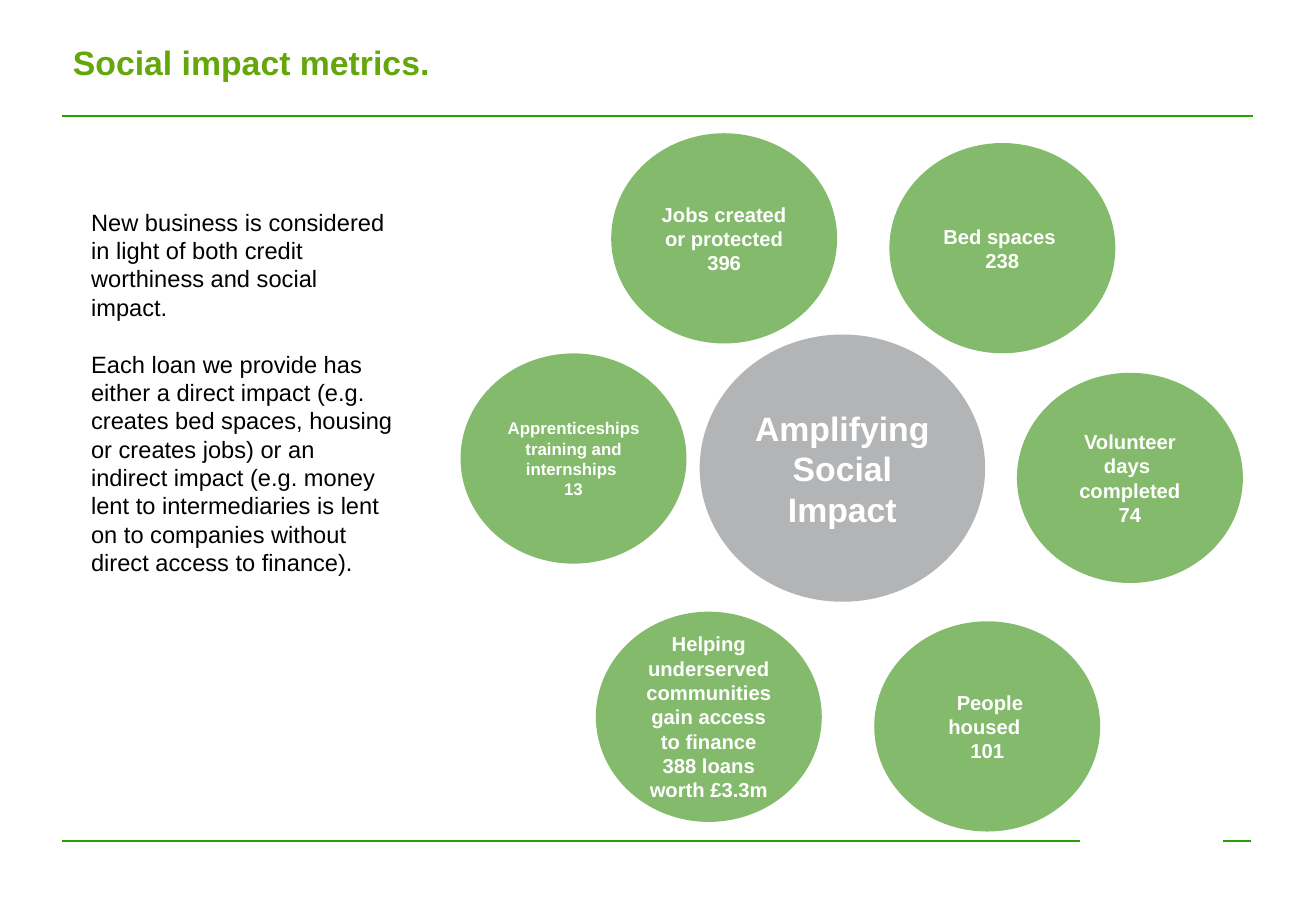
from lxml.etree import SubElement
from pptx import Presentation
from pptx.dml.color import RGBColor
from pptx.enum.shapes import MSO_CONNECTOR, MSO_SHAPE
from pptx.enum.text import MSO_ANCHOR, MSO_AUTO_SIZE, PP_ALIGN
from pptx.oxml.ns import qn
from pptx.util import Pt

TITLE = "Social impact metrics."
BODY = [
    "New business is considered in light of both credit worthiness and social impact.",
    "Each loan we provide has either a direct impact (e.g. creates bed spaces, housing "
    "or creates jobs) or an indirect impact (e.g. money lent to intermediaries is lent "
    "on to companies without direct access to finance).",
]
HUB = ["Amplifying ", "Social", "Impact"]
# left, top, font size, lines
METRICS = [
    (362.3, 79, 12, ["Jobs created or protected", "396"]),
    (527.2, 84.8, 12, ["Bed spaces ", "238"]),
    (602.8, 221, 12, ["Volunteer days ", "completed", "74"]),
    (518.2, 368.3, 12, [" People housed ", "101"]),
    (353.2, 362.6, 12, ["Helping underserved communities gain access to finance",
                        "388 loans worth £3.3m"]),
    (273, 209.5, 10, ["Apprenticeships training and internships ", "13"]),
]
# from x, to x, y
RULES = [(36.7, 742.5, 68.6), (36.7, 640, 498.7), (725, 741.6, 498.7)]

FONT = "Arial"
LEAF = RGBColor(0x64, 0xA7, 0x0B)
RULE = RGBColor(0x26, 0x9F, 0x00)
GREEN = RGBColor(0x63, 0xA8, 0x44)
GREY = RGBColor(0xA7, 0xA8, 0xAA)
BLACK = RGBColor(0, 0, 0)
WHITE = RGBColor(0xFF, 0xFF, 0xFF)


def write(frame, lines, size, color, bold, align, gap=0):
    frame.word_wrap = True
    frame.text = "\n".join(lines)
    for i, para in enumerate(frame.paragraphs):
        para.alignment = align
        para.space_before = Pt(gap if i else 0)
        font = para.font
        font.name, font.size, font.bold = FONT, Pt(size), bold
        font.color.rgb = color


def inset(frame, side, top):
    frame.margin_left = frame.margin_right = Pt(side)
    frame.margin_top = frame.margin_bottom = Pt(top)
    frame.vertical_anchor = MSO_ANCHOR.TOP


def bubble(left, top, width, height, fill, alpha, size, lines):
    oval = slide.shapes.add_shape(
        MSO_SHAPE.OVAL, Pt(left), Pt(top), Pt(width), Pt(height))
    oval.shadow.inherit = False
    oval.fill.solid()
    oval.fill.fore_color.rgb = fill
    tint = oval.fill._xPr.find(".//" + qn("a:srgbClr"))
    SubElement(tint, qn("a:alpha"), val=str(alpha * 1000))
    oval.line.fill.background()
    oval.text_frame.vertical_anchor = MSO_ANCHOR.MIDDLE
    write(oval.text_frame, lines, size, WHITE, True, PP_ALIGN.CENTER)


deck = Presentation()
deck.slide_width, deck.slide_height = Pt(780), Pt(540)
slide = deck.slides.add_slide(deck.slide_layouts[5])

# Rules at the head and foot
for start, end, y in RULES:
    rule = slide.shapes.add_connector(
        MSO_CONNECTOR.STRAIGHT, Pt(start), Pt(y), Pt(end), Pt(y))
    rule.line.color.rgb = RULE
    rule.line.width = Pt(1)
    SubElement(rule._element.spPr, qn("a:effectLst"))

# Title
title = slide.shapes.title
title.left, title.top, title.width, title.height = Pt(35.3), Pt(20.5), Pt(707), Pt(32.4)
inset(title.text_frame, 7.9, 4.3)
title.text_frame.auto_size = MSO_AUTO_SIZE.NONE
write(title.text_frame, [TITLE], 20, LEAF, True, PP_ALIGN.LEFT)

# Body text
body = slide.shapes.add_textbox(Pt(38.2), Pt(107.3), Pt(212), Pt(320.4))
inset(body.text_frame, 15.8, 15.8)
write(body.text_frame, BODY, 14, BLACK, False, PP_ALIGN.LEFT, gap=16.8)

# Hub and metric bubbles
bubble(414.7, 198.3, 169.2, 158.4, GREY, 86, 20, HUB)
for left, top, size, lines in METRICS:
    bubble(left, top, 133.9, 124.6, GREEN, 79, size, lines)

deck.save("out.pptx")
